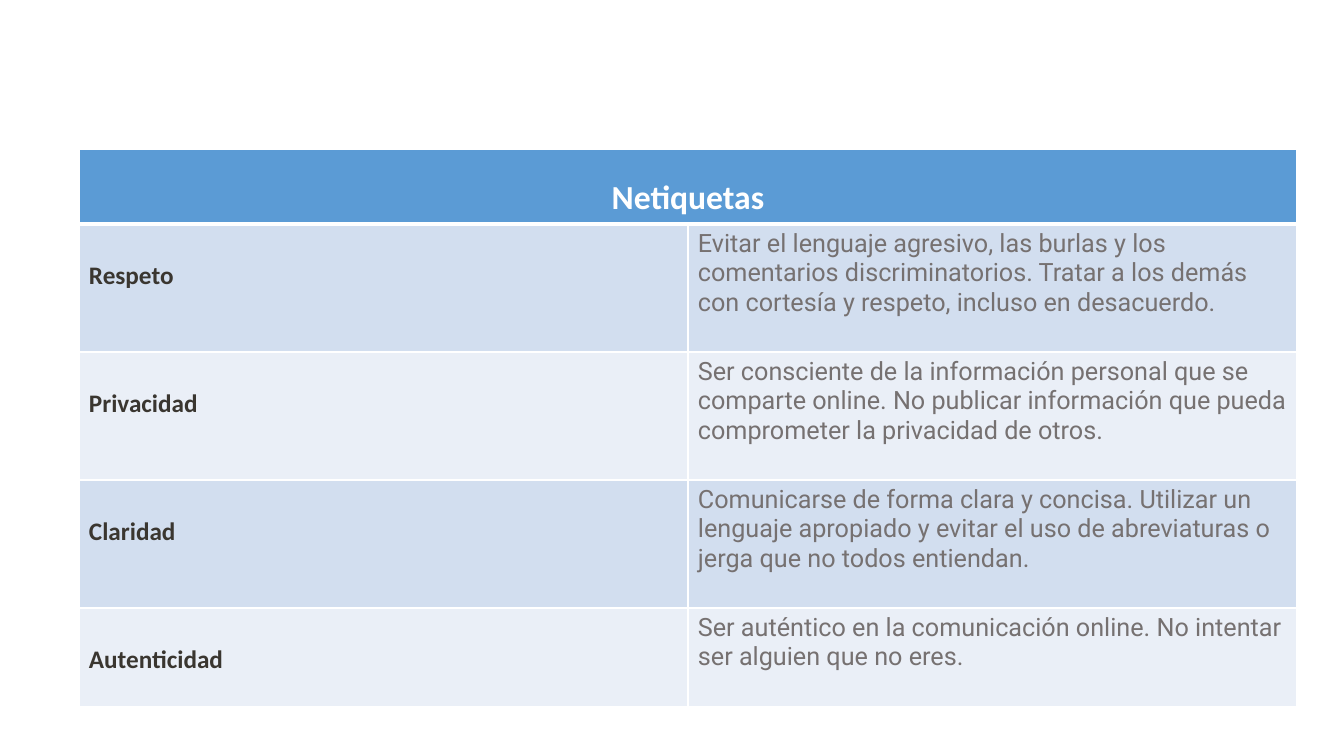
import dataclasses

import lxml.etree
import pptx
import pptx.dml.color
import pptx.enum.text
import pptx.oxml.ns
import pptx.table
import pptx.util

EMU_PER_PX = 914400 / 100.8
SLIDE_WIDTH, SLIDE_HEIGHT = 1344, 756
TABLE_LEFT, TABLE_TOP = 79, 149
COLUMN_WIDTH = 609
HEADER_HEIGHT = 74
SIDE_MARGIN, TEXT_MARGIN = 10, 5
LABEL_DROP = 36  # labels sit one line below the top of their row

COLORS = {
    "header": "5B9BD5",
    "band_dark": "D2DEEF",
    "band_light": "EAEFF7",
    "white": "FFFFFF",
    "label": "3A3630",
    "advice": "767171",
}
BANDS = ("band_dark", "band_light")


@dataclasses.dataclass(frozen=True)
class Netiquette:
    name: str
    advice: str
    height: int = 128


NETIQUETTES = [
    Netiquette(
        "Respeto",
        "Evitar el lenguaje agresivo, las burlas y los comentarios discriminatorios. "
        "Tratar a los demás con cortesía y respeto, incluso en desacuerdo.",
    ),
    Netiquette(
        "Privacidad",
        "Ser consciente de la información personal que se comparte online. "
        "No publicar información que pueda comprometer la privacidad de otros.",
    ),
    Netiquette(
        "Claridad",
        "Comunicarse de forma clara y concisa. Utilizar un lenguaje apropiado "
        "y evitar el uso de abreviaturas o jerga que no todos entiendan.",
    ),
    Netiquette(
        "Autenticidad",
        "Ser auténtico en la comunicación online. No intentar ser alguien que no eres.",
        height=99,
    ),
]


def px(length: int) -> pptx.util.Emu:
    return pptx.util.Emu(round(length * EMU_PER_PX))


def rgb(name: str) -> pptx.dml.color.RGBColor:
    return pptx.dml.color.RGBColor.from_string(COLORS[name])


def style_cell(cell: pptx.table._Cell, fill: str, top: float = 1, bottom: float = 1) -> None:
    """Give a cell white borders (widths in points) and a solid fill."""
    qn = pptx.oxml.ns.qn
    properties = cell._tc.get_or_add_tcPr()
    for side, width in {"L": 1, "R": 1, "T": top, "B": bottom}.items():
        border = lxml.etree.SubElement(
            properties, qn(f"a:ln{side}"), w=str(pptx.util.Pt(width))
        )
        solid = lxml.etree.SubElement(border, qn("a:solidFill"))
        lxml.etree.SubElement(solid, qn("a:srgbClr"), val=COLORS["white"])
    cell.fill.solid()
    cell.fill.fore_color.rgb = rgb(fill)


def write(
    cell: pptx.table._Cell,
    text: str,
    *,
    color: str,
    font: str = "Calibri",
    size: int = 18,
    bold: bool = False,
    centered: bool = False,
    line_points: float | None = None,
    margin_top: int = TEXT_MARGIN,
) -> None:
    cell.margin_left = cell.margin_right = px(SIDE_MARGIN)
    cell.margin_top, cell.margin_bottom = px(margin_top), px(TEXT_MARGIN)
    paragraph = cell.text_frame.paragraphs[0]
    align = pptx.enum.text.PP_ALIGN
    paragraph.alignment = align.CENTER if centered else align.LEFT
    if line_points:
        paragraph.line_spacing = pptx.util.Pt(line_points)
    run = paragraph.add_run()
    run.text = text
    run.font.name = font
    run.font.size = pptx.util.Pt(size)
    run.font.bold = bold
    run.font.color.rgb = rgb(color)


def main() -> None:
    deck = pptx.Presentation()
    deck.slide_width, deck.slide_height = px(SLIDE_WIDTH), px(SLIDE_HEIGHT)
    slide = deck.slides.add_slide(deck.slide_layouts[6])

    # Table grid
    heights = [HEADER_HEIGHT] + [rule.height for rule in NETIQUETTES]
    netiquettes = slide.shapes.add_table(
        len(heights), 2,
        px(TABLE_LEFT), px(TABLE_TOP), px(2 * COLUMN_WIDTH), px(sum(heights)),
    ).table
    for column in netiquettes.columns:
        column.width = px(COLUMN_WIDTH)
    for row, height in zip(netiquettes.rows, heights):
        row.height = px(height)

    # Header across both columns
    header = netiquettes.cell(0, 0)
    header.merge(netiquettes.cell(0, 1))
    for cell in netiquettes.rows[0].cells:
        style_cell(cell, "header", bottom=3)
    write(header, "Netiquetas", color="white", size=24, bold=True,
          centered=True, line_points=46.5)

    # One banded row per rule
    for index, rule in enumerate(NETIQUETTES):
        label, advice = netiquettes.rows[index + 1].cells
        for cell in (label, advice):
            style_cell(cell, BANDS[index % 2], top=3 if index == 0 else 1)
        write(label, rule.name, color="label", bold=True, margin_top=LABEL_DROP)
        write(advice, rule.advice, color="advice", font="Roboto")

    deck.save("out.pptx")


if __name__ == "__main__":
    main()
